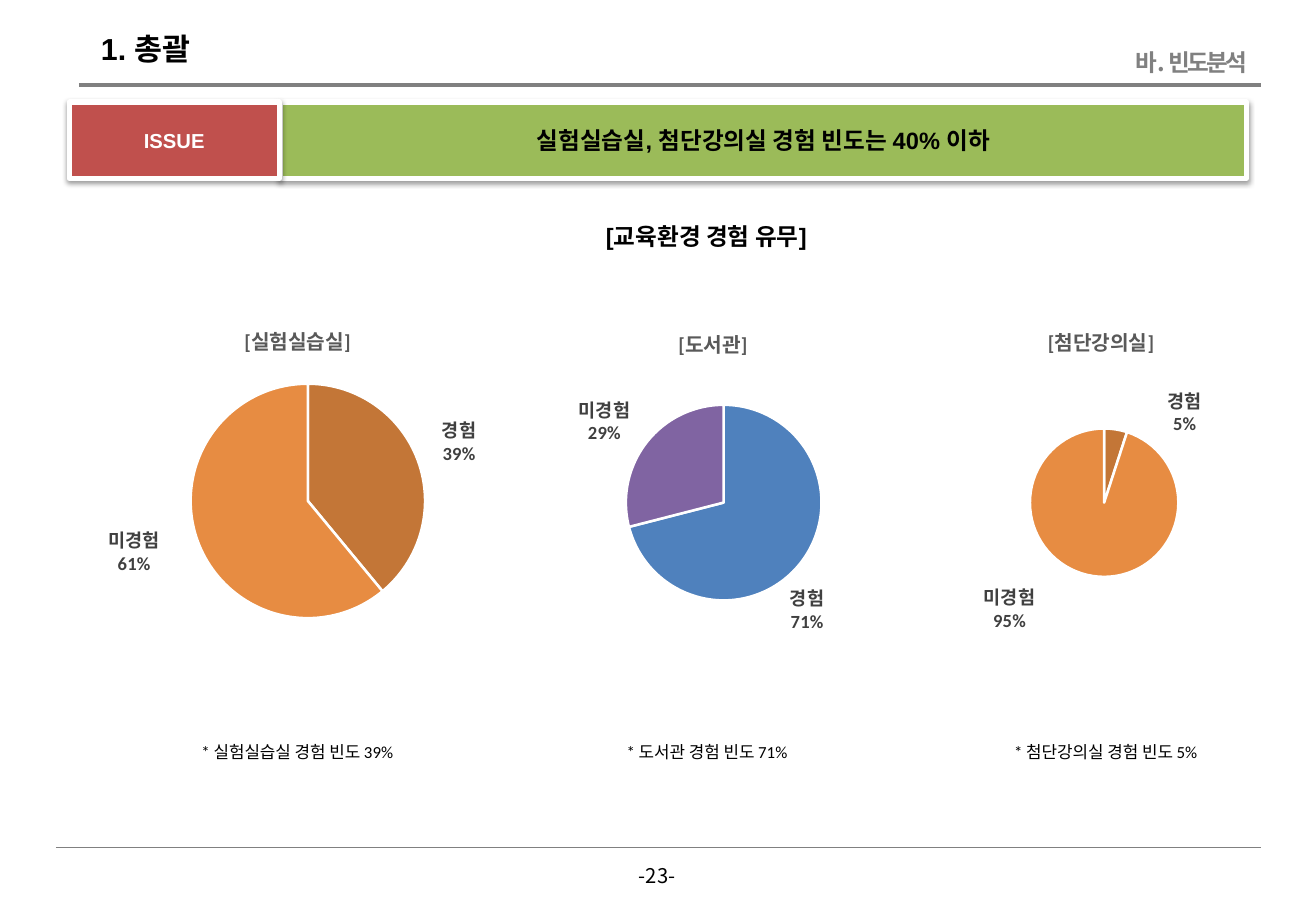
from lxml import etree
from pptx import Presentation
from pptx.chart.data import CategoryChartData
from pptx.dml.color import RGBColor
from pptx.enum.chart import XL_CHART_TYPE as CHART, XL_LABEL_POSITION as LABEL
from pptx.enum.shapes import MSO_CONNECTOR as CONN, MSO_SHAPE as SHAPE
from pptx.enum.text import MSO_ANCHOR as ANCHOR, MSO_AUTO_SIZE as AUTO, PP_ALIGN as ALIGN
from pptx.oxml import parse_xml
from pptx.oxml.ns import nsdecls, qn
from pptx.util import Pt

rgb = RGBColor.from_string


def write_text(sp, text, size=14, font="Arial", color="000000", bold=False,
               align=ALIGN.CENTER, anchor=ANCHOR.TOP, wrap=True, hanging=0, tracking=0):
    tf = sp.text_frame
    tf.word_wrap = wrap
    tf.auto_size = AUTO.NONE
    tf.vertical_anchor = anchor
    p = tf.paragraphs[0]
    p.alignment = align
    p.space_before = Pt(0)
    if hanging:
        pPr = p._p.get_or_add_pPr()
        pPr.set("marL", str(Pt(hanging)))
        pPr.set("indent", str(-Pt(hanging)))
    r = p.add_run()
    r.text = text
    r.font.size, r.font.name, r.font.bold = Pt(size), font, bold
    r.font.color.rgb = rgb(color)
    if tracking:
        r._r.get_or_add_rPr().set("spc", str(int(tracking * 100)))


def set_layout(parent, index, modes, **values):
    """Place a chart part by hand; values are fractions of the chart's size."""
    for old in parent.findall(qn("c:layout")):
        parent.remove(old)
    layout = parse_xml(f"<c:layout {nsdecls('c')}><c:manualLayout/></c:layout>")
    for tag, value in {**modes, **values}.items():
        text = value if isinstance(value, str) else f"{value:.4f}"
        etree.SubElement(layout[0], qn(f"c:{tag}")).set("val", text)
    parent.insert(index, layout)


prs = Presentation()
prs.slide_width, prs.slide_height = Pt(780), Pt(540)
s = prs.slides.add_slide(prs.slide_layouts[0])

# Header and footer
for x, y, width in [(46.8, 50.4, 2), (33.1, 502.6, 0.5)]:
    rule = s.shapes.add_connector(CONN.STRAIGHT, Pt(x), Pt(y), Pt(747.4), Pt(y))
    rule.line.color.rgb = rgb("808080")
    rule.line.width = Pt(width)
    etree.SubElement(rule._element.spPr, qn("a:effectLst"))

title, subtitle = s.placeholders
title.left, title.top, title.width, title.height = Pt(52.6), Pt(14.4), Pt(72.7), Pt(29)
write_text(title, "1. 총괄", size=18, bold=True, align=ALIGN.LEFT, wrap=False)
subtitle.left, subtitle.top, subtitle.width, subtitle.height = Pt(398.2), Pt(24.5), Pt(348.5), Pt(24.5)
write_text(subtitle, "바. 빈도분석", font="Noto Sans CJK KR", color="808080", bold=True,
           align=ALIGN.RIGHT, tracking=-1.5)
page = s.shapes.add_textbox(Pt(370.8), Pt(508.3), Pt(37.4), Pt(21.6))
write_text(page, "-23-", size=12, font="Noto Sans CJK KR", wrap=False)

# Issue banner
for x, w, fill, text, size, color in [
    (166.3, 572.4, "9BBB59", "실험실습실, 첨단강의실 경험 빈도는 40% 이하", 14, "000000"),
    (41, 124.6, "C0504D", "ISSUE", 12, "FFFFFF"),
]:
    sp = s.shapes.add_shape(SHAPE.RECTANGLE, Pt(x), Pt(60.5), Pt(w), Pt(45.4))
    sp.fill.solid()
    sp.fill.fore_color.rgb = rgb(fill)
    sp.line.color.rgb = rgb("FFFFFF")
    sp.line.width = Pt(3)
    sp._element.spPr.append(parse_xml(
        f'<a:effectLst {nsdecls("a")}><a:outerShdw blurRad="{Pt(3.1)}" dist="{Pt(1.6)}" '
        'dir="5400000" rotWithShape="0"><a:srgbClr val="000000"><a:alpha val="38000"/>'
        '</a:srgbClr></a:outerShdw></a:effectLst>'))
    write_text(sp, text, size=size, color=color, bold=True, anchor=ANCHOR.MIDDLE)

heading = s.shapes.add_textbox(Pt(121), Pt(128.2), Pt(595.4), Pt(24.5))
write_text(heading, "[교육환경 경험 유무]", bold=True)

# Pies: facility, share, colours, chart box, title corner, pie centre and diameter,
# label shifts, note left and width
ORANGES, BLUE_PURPLE = ("C37637", "E78C42"), ("4F81BD", "8064A2")
EDGE = {"xMode": "edge", "yMode": "edge"}
pies = [
    ("실험실습실", 39, ORANGES, (41, 176.4, 272.2, 208.8), (142.8, 189), (182.5, 297, 139),
     [(10, 4), (-18, -10)], (112.3, 178.6)),
    ("도서관", 71, BLUE_PURPLE, (275, 177.8, 297.4, 206.6), (400, 191), (429, 298, 116),
     [(-10, 10), (-6, 4)], (364.3, 127.4)),
    ("첨단강의실", 5, ORANGES, (517.7, 177.1, 272.2, 208.8), (619, 190), (654.5, 298, 88),
     [(30, 8), (-33, 0)], (594, 139)),
]
for facility, share, colors, box, corner, (cx, cy, d), shifts, (note_x, note_w) in pies:
    x, y, w, h = box
    data = CategoryChartData()
    data.categories = ["경험", "미경험"]
    data.add_series("Series 1", (share, 100 - share))
    chart = s.shapes.add_chart(CHART.PIE, *map(Pt, box), data).chart
    chart.has_legend = False
    chart.font.size, chart.font.name = Pt(10), "Calibri"
    chart.font.color.rgb = rgb("000000")

    chart.has_title = True
    p = chart.chart_title.text_frame.paragraphs[0]
    r = p.add_run()
    r.text = f"[{facility}]"
    r.font.size, r.font.bold, r.font.name = Pt(12), True, "Calibri"
    r.font.color.rgb = rgb("595959")
    set_layout(chart.chart_title._element, 1, EDGE,
               x=(corner[0] - x) / w, y=(corner[1] - y) / h)
    plot_area = chart._chartSpace.xpath(".//c:plotArea")[0]
    set_layout(plot_area, 0, {"layoutTarget": "inner", **EDGE},
               x=(cx - d / 2 - x) / w, y=(cy - d / 2 - y) / h, w=d / w, h=d / h)

    plot = chart.plots[0]
    plot.vary_by_categories = True
    for i, (color, (dx, dy)) in enumerate(zip(colors, shifts)):
        point = plot.series[0].points[i]
        point.format.fill.solid()
        point.format.fill.fore_color.rgb = rgb(color)
        point.format.line.color.rgb = rgb("FFFFFF")
        point.format.line.width = Pt(1.5)
        label = point.data_label
        label.font.size, label.font.bold, label.font.name = Pt(11), True, "Calibri"
        label.font.color.rgb = rgb("404040")
        label.position = LABEL.OUTSIDE_END
        dLbl = chart._chartSpace.xpath(".//c:dLbl")[i]
        for tag, shown in [("showVal", "0"), ("showCatName", "1"), ("showPercent", "1")]:
            dLbl.find(qn(f"c:{tag}")).set("val", shown)
        etree.SubElement(dLbl, qn("c:separator")).text = "\n"
        set_layout(dLbl, 1, {}, x=dx / w, y=dy / h)
    for leader in chart._chartSpace.xpath(".//c:showLeaderLines"):
        leader.set("val", "0")

    note = s.shapes.add_textbox(Pt(note_x), Pt(436.3), Pt(note_w), Pt(19.4))
    write_text(note, f"* {facility} 경험 빈도 {share}%", size=10, font="Calibri",
               align=ALIGN.LEFT, hanging=6.5)

prs.save("out.pptx")
